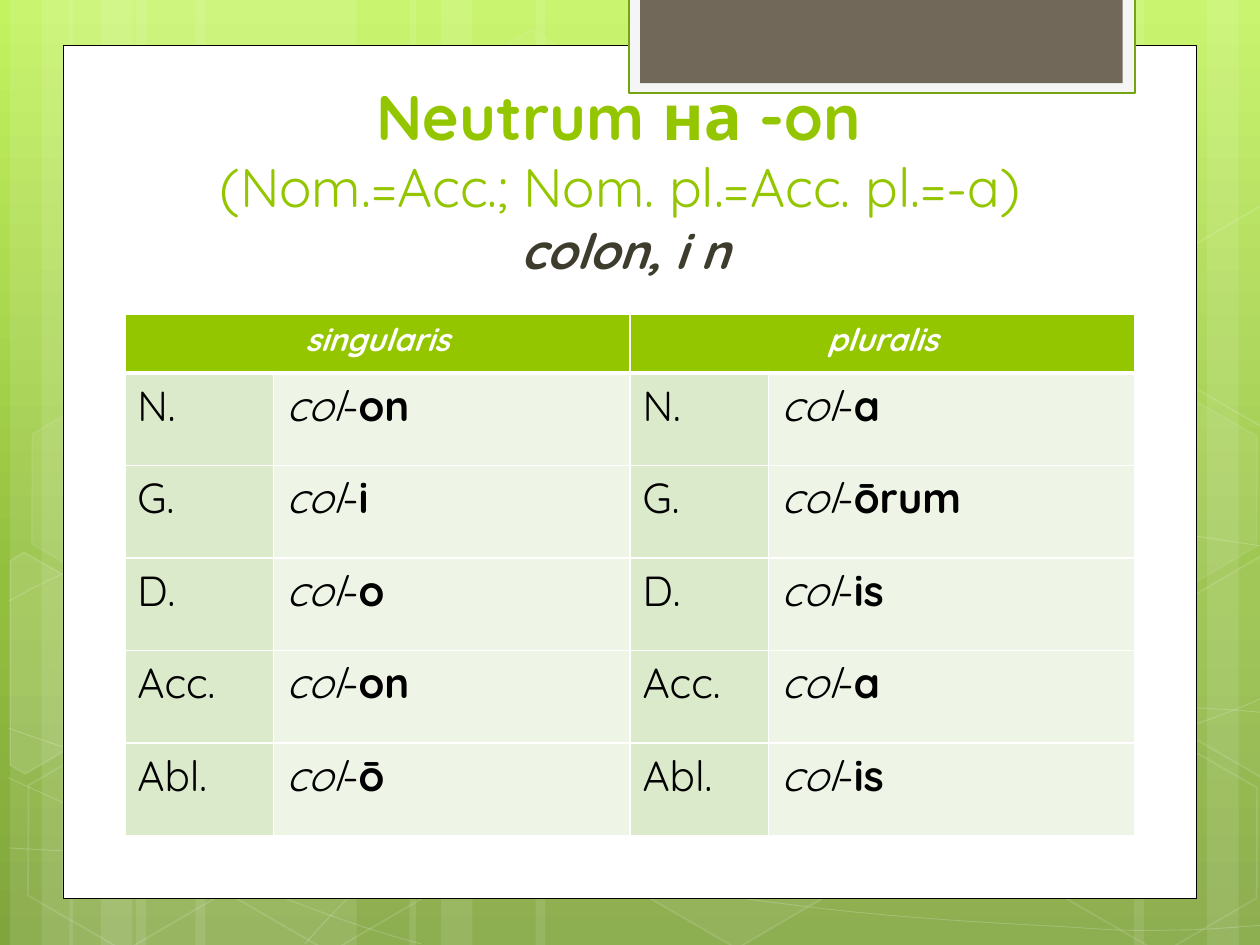
import copy
import math

import pptx
import pptx.dml.color
import pptx.enum.shapes
import pptx.enum.text
import pptx.oxml
import pptx.oxml.ns
import pptx.util

COLUMNS, ROWS = 10, 7.5
UNIT = pptx.util.Inches(1)
FONT = "Quicksand"
GREEN, WHITE, BLACK, DARK = "94C600", "FFFFFF", "000000", "3E3D2D"
STEM_TINT, FORM_TINT = "DCEACC", "EEF5E7"
RECTANGLE = pptx.enum.shapes.MSO_SHAPE.RECTANGLE
HEXAGON = pptx.enum.shapes.MSO_SHAPE.HEXAGON
CENTER = pptx.enum.text.PP_ALIGN.CENTER
TILT = 30

BACKGROUND = [(0, "C3F35F"), (0.62, "93BF3F"), (1, "81A53E")]
# left column and width of each full-height light band; those past MIRRORED are turned round
BANDS = [(1.08, 1.75), (0.08, 0.5), (0.33, 0.83), (1.55, 1.75), (0.55, 0.5), (0.8, 0.83),
         (7.33, 1.75), (9.58, 0.5), (9, 0.83), (4.25, 3.08), (3.25, 0.5), (3.5, 0.83)]
MIRRORED = 7
# start point, then Bézier triples; a knot in STRAIGHT is reached by a line
WAVES = [
    [(0.07, 6.73), (0.61, 6.76), (1.15, 6.79), (1.9, 6.78), (2.65, 6.77), (3.58, 6.75),
     (4.58, 6.65), (5.58, 6.55), (7, 6.36), (7.92, 6.17), (8.83, 5.98), (9.77, 5.68),
     (10.07, 5.51)],
    [(0.07, 4.77), (0.36, 4.61), (0.65, 4.46), (1.21, 4.31), (1.78, 4.16), (2.59, 3.94),
     (3.47, 3.87), (4.36, 3.8), (5.44, 3.79), (6.54, 3.87), (7.64, 3.95), (9.47, 4.26),
     (10.07, 4.34)],
    [(0.06, 6.17), (1.27, 6.72), (2.47, 7.27), (3.34, 7.49)],
    [(0.07, 5.78), (0.38, 5.89), (0.7, 6), (1.28, 6.16), (1.86, 6.31), (2.73, 6.56),
     (3.57, 6.73), (4.4, 6.9), (5.45, 7.08), (6.28, 7.18), (7.11, 7.29), (8, 7.33),
     (8.53, 7.36), (9.05, 7.4), (9.19, 7.38), (9.45, 7.38), (9.71, 7.37), (9.89, 7.35),
     (10.07, 7.34)],
    [(2.42, 7.49), (2.6, 7.29), (2.78, 7.09), (3.02, 6.91), (3.26, 6.73), (3.6, 6.53),
     (3.88, 6.39), (4.16, 6.25), (4.33, 6.19), (4.7, 6.09), (5.06, 5.99), (5.73, 5.85),
     (6.08, 5.78), (6.44, 5.71), (6.49, 5.71), (6.8, 5.69), (7.11, 5.66), (7.6, 5.63),
     (7.94, 5.62), (8.29, 5.61), (8.86, 5.62), (8.86, 5.62), (9.53, 5.62), (9.71, 5.63),
     (9.88, 5.64), (9.97, 5.65), (10.06, 5.66), (10.03, 5.65), (10.06, 5.66)],
]
STRAIGHT = {(9.53, 5.62)}
# left, top, fill opacity, line opacity
HEXAGONS = [(3.34, 0.36, 4, 8), (4.97, 5.89, 6, 12), (0.11, 5.91, 0, 12), (0.14, 3.12, 7, 8),
            (1.74, 5.92, 0, 12), (7.53, 4.53, 10, 12), (8.34, 5.93, 0, 12), (8.34, 3.14, 7, 8)]
# fill opacity, centre and corners of the hexagons cut off by the slide's edge
CUT_HEXAGONS = [
    (10, (0.36, 5.35),
     [(0.08, 4.45), (0.19, 4.38), (0.96, 4.82), (0.95, 5.7), (0.2, 6.14), (0.08, 6.07)]),
    (4, (9.85, 5.2),
     [(9.26, 4.85), (10.01, 4.41), (10.09, 4.46), (10.09, 6.13), (10.02, 6.17), (9.26, 5.73)]),
    (0, (9.85, 2.41),
     [(9.26, 2.07), (10.01, 1.63), (10.1, 1.68), (10.09, 3.35), (10.02, 3.39), (9.26, 2.95)]),
]
NUMBERS = ["singularis", "pluralis"]
STEM = "col"
ENDINGS = [("N.", "on", "a"), ("G.", "i", "ōrum"), ("D.", "o", "is"),
           ("Acc.", "on", "a"), ("Abl.", "ō", "is")]


def grid(*lengths):
    """Turn grid columns or rows into slide lengths."""
    return [pptx.util.Emu(round(length * UNIT)) for length in lengths]


def color(code):
    return pptx.dml.color.RGBColor.from_string(code)


def paint(fill, code, opacity=100):
    if not opacity:
        fill.background()
        return
    fill.solid()
    fill.fore_color.rgb = color(code)
    if opacity < 100:
        tint = fill._xPr.find(pptx.oxml.ns.qn("a:solidFill"))[0]
        tint.append(pptx.oxml.parse_xml(
            f'<a:alpha {pptx.oxml.ns.nsdecls("a")} val="{opacity * 1000}"/>'))


def dress(shape, fill=WHITE, fill_opacity=100, line=WHITE, line_opacity=0, width=1):
    shape.shadow.inherit = False
    paint(shape.fill, fill, fill_opacity)
    paint(shape.line.fill, line, line_opacity)
    if line_opacity:
        shape.line.width = pptx.util.Pt(width)


def add_preset(slide, preset, box, **look):
    shape = slide.shapes.add_shape(preset, *grid(*box))
    dress(shape, **look)
    return shape


def add_outline(slide, corners, close, **look):
    start, *rest = [grid(*corner) for corner in corners]
    builder = slide.shapes.build_freeform(*start)
    builder.add_line_segments(rest, close=close)
    shape = builder.convert_to_shape()
    dress(shape, **look)
    return shape


def bend(wave, knots):
    """Join each three line segments into one cubic Bézier segment."""
    lines = list(wave._element.iter(pptx.oxml.ns.qn("a:lnTo")))
    triple = []
    for line, knot in zip(lines, knots[1:]):
        if knot in STRAIGHT:
            continue
        triple.append(line)
        if len(triple) == 3:
            curve = pptx.oxml.parse_xml(f'<a:cubicBezTo {pptx.oxml.ns.nsdecls("a")}/>')
            line.addprevious(curve)
            for part in triple:
                curve.append(part[0])
                part.getparent().remove(part)
            triple = []


def untilt(corner, center):
    """Turn a corner back by the tilt around the centre."""
    angle = math.radians(-TILT)
    x, y = corner[0] - center[0], corner[1] - center[1]
    return (center[0] + x * math.cos(angle) - y * math.sin(angle),
            center[1] + x * math.sin(angle) + y * math.cos(angle))


def add_run(paragraph, words, code, size, **styles):
    run = paragraph.add_run()
    run.text = words
    run.font.color.rgb = color(code)
    looks = {"name": FONT, "size": pptx.util.Pt(size), "bold": False, "italic": False, **styles}
    for name, value in looks.items():
        setattr(run.font, name, value)


def add_text(slide, box, anchor):
    """Add a wrapped text box and return its centred paragraph."""
    frame = slide.shapes.add_textbox(*grid(*box)).text_frame
    frame.word_wrap = True
    frame.vertical_anchor = anchor
    frame.paragraphs[0].alignment = CENTER
    return frame.paragraphs[0]


def finish_cell(cell, fill, top=1, bottom=1):
    paint(cell.fill, fill)
    properties = cell._tc.get_or_add_tcPr()
    for place, (side, width) in enumerate(zip("LRTB", (1, 1, top, bottom))):
        properties.insert(place, pptx.oxml.parse_xml(
            f'<a:ln{side} {pptx.oxml.ns.nsdecls("a")} w="{width * 12700}">'
            f'<a:solidFill><a:srgbClr val="{WHITE}"/></a:solidFill></a:ln{side}>'))


def add_declension(slide):
    height, header_height = 4.14, 0.47
    widths = grid(1.18, 2.83, 1.1, 2.91)
    heights = grid(header_height, *[(height - header_height) / len(ENDINGS)] * len(ENDINGS))
    table = slide.shapes.add_table(len(heights), len(widths), *grid(0.99, 2.49, 8.02, height)).table
    for column, width in zip(table.columns, widths):
        column.width = width
    for row, row_height in zip(table.rows, heights):
        row.height = row_height
    for index, number in enumerate(NUMBERS):
        case_column = 2 * index
        header = table.cell(0, case_column)
        header.merge(table.cell(0, case_column + 1))
        header.text_frame.paragraphs[0].alignment = CENTER
        add_run(header.text_frame.paragraphs[0], number, WHITE, 18, bold=True, italic=True)
        for column in (case_column, case_column + 1):
            finish_cell(table.cell(0, column), GREEN, bottom=3)
        for row, (case, *endings) in enumerate(ENDINGS, 1):
            label, form = table.cell(row, case_column), table.cell(row, case_column + 1)
            add_run(label.text_frame.paragraphs[0], case, BLACK, 24)
            for words, styles in ((STEM, {"italic": True}), ("-", {}),
                                  (endings[index], {"bold": True})):
                add_run(form.text_frame.paragraphs[0], words, BLACK, 24, **styles)
            for cell, tint in ((label, STEM_TINT), (form, FORM_TINT)):
                finish_cell(cell, tint, top=3 if row == 1 else 1)


def add_backdrop(slide):
    fill = slide.background.fill
    fill.gradient()
    fill.gradient_angle = 270
    stops = slide._element.find(".//" + pptx.oxml.ns.qn("a:gsLst"))
    stops.append(copy.deepcopy(stops[-1]))
    for stop, (position, code) in zip(fill.gradient_stops, BACKGROUND):
        stop.position = position
        stop.color.rgb = color(code)
    for left, width in BANDS:
        band = add_preset(slide, RECTANGLE, (left, 0, width, ROWS), fill_opacity=10)
        band.rotation = 180 if left > MIRRORED else 0
    for knots in WAVES:
        bend(add_outline(slide, knots, False, fill_opacity=0, line_opacity=20, width=0.5), knots)
    for left, top, inside, edge in HEXAGONS:
        hexagon = add_preset(slide, HEXAGON, (left, top, 1.75, 1.52),
                             fill_opacity=inside, line_opacity=edge)
        hexagon.rotation = TILT
        hexagon.adjustments[0] = 0.285
    for inside, center, corners in CUT_HEXAGONS:
        upright = [untilt(corner, center) for corner in corners]
        add_outline(slide, upright, True, fill_opacity=inside, line_opacity=12).rotation = TILT


def main():
    deck = pptx.Presentation()
    deck.slide_width, deck.slide_height = grid(COLUMNS, ROWS)
    slide = deck.slides.add_slide(deck.slide_layouts[6])
    add_backdrop(slide)
    add_preset(slide, RECTANGLE, (0.5, 0.36, 9, 6.77), line=BLACK, line_opacity=100, width=0.5)
    add_preset(slide, RECTANGLE, (4.99, -0.02, 4.02, 0.76), fill="F5F5F5",
               line="74A510", line_opacity=100, width=1.25)
    add_preset(slide, RECTANGLE, (5.08, -0.02, 3.83, 0.68), fill="71685A")

    title = add_text(slide, (1.14, 0.21, 7.68, 1.57), pptx.enum.text.MSO_ANCHOR.BOTTOM)
    add_run(title, "Neutrum на -on ", GREEN, 36, bold=True)
    title.add_line_break()
    add_run(title, "(Nom.=Acc.; Nom. pl.=Acc. pl.=-a) ", GREEN, 31)
    example = add_text(slide, (1.22, 1.7, 7.41, 0.71), pptx.enum.text.MSO_ANCHOR.TOP)
    example._p.get_or_add_pPr().set("marL", str(grid(0.07)[0]))
    add_run(example, "colon, i n", DARK, 28, bold=True, italic=True)
    add_declension(slide)
    deck.save("out.pptx")


if __name__ == "__main__":
    main()
